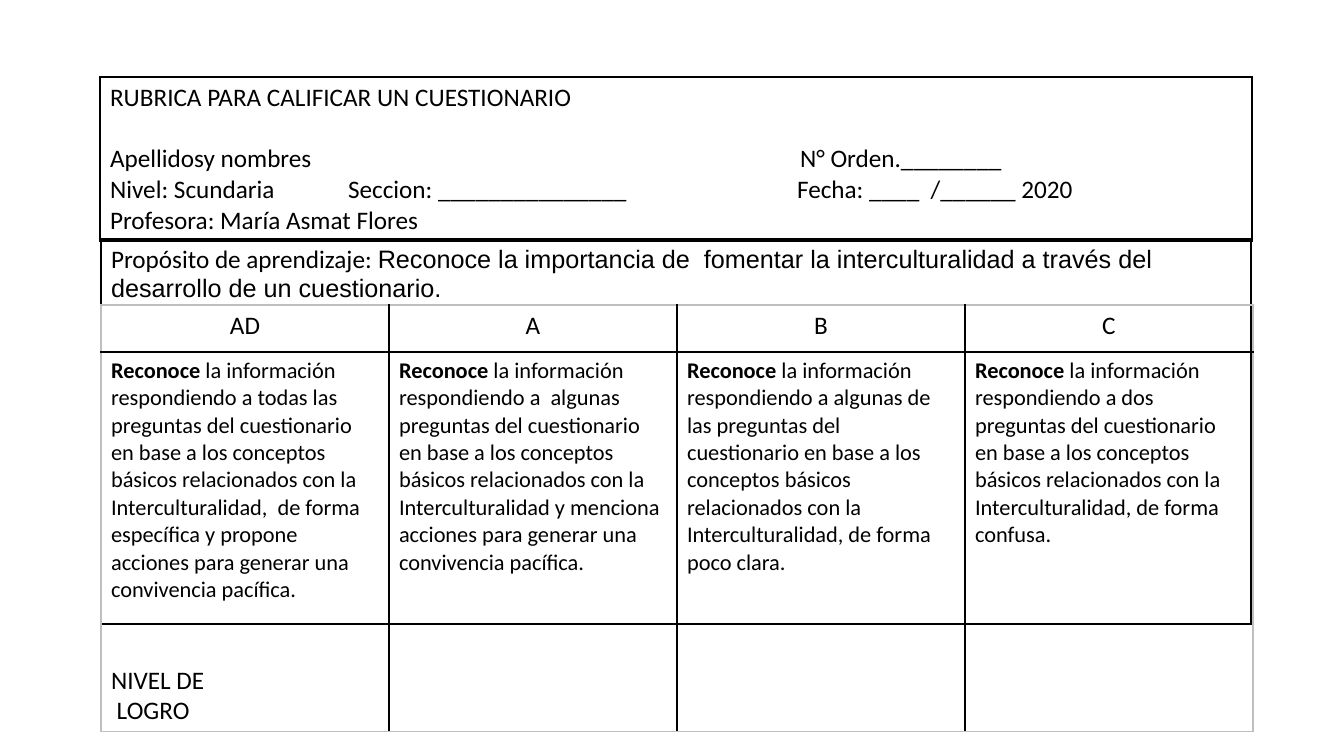
import pptx
import pptx.dml.color
import pptx.enum.text
import pptx.oxml.ns
import pptx.util
from lxml import etree

EMU_PER_PX = 914400 / 100.8
COLORS = {"text": "000000", "line": "000000", "outline": "BFBFBF"}
LINE_GAP = 22  # points, one line of 18 pt text
CENTER = pptx.enum.text.PP_ALIGN.CENTER

# A cell is a list of (runs, format) paragraphs; a run is (text, format).
HEADING = [
    ([("RUBRICA PARA CALIFICAR UN CUESTIONARIO", {})], {}),
    ([("Apellidosy nombres\tN° Orden.________", {})], {"before": LINE_GAP, "tabs": [690]}),
    ([("Nivel: Scundaria\tSeccion: _______________\tFecha: ____  /______ 2020", {})],
     {"tabs": [238, 687]}),
    ([("Profesora: María Asmat Flores", {})], {}),
]
PURPOSE = [
    ([("Propósito de aprendizaje: ", {}),
      ("Reconoce la importancia de  fomentar la interculturalidad a través del "
       "desarrollo de un cuestionario.", {"font": "Arial"})], {}),
]
LEVELS = {
    "AD": " la información respondiendo a todas las preguntas del cuestionario en base a los "
          "conceptos básicos relacionados con la Interculturalidad,  de forma específica y "
          "propone acciones para generar una convivencia pacífica.",
    "A": " la información respondiendo a  algunas preguntas del cuestionario en base a los "
         "conceptos básicos relacionados con la Interculturalidad y menciona acciones para "
         "generar una convivencia pacífica.",
    "B": " la información respondiendo a algunas de las preguntas del cuestionario en base a "
         "los conceptos básicos relacionados con la Interculturalidad, de forma poco clara.",
    "C": " la información respondiendo a dos preguntas del cuestionario en base a los "
         "conceptos básicos relacionados con la Interculturalidad, de forma  confusa.",
}
ACHIEVEMENT = [
    ([("NIVEL DE", {})], {"before": 2 * LINE_GAP}),
    ([(" LOGRO", {})], {}),
]


def px(length):
    return pptx.util.Emu(round(length * EMU_PER_PX))


def add_run(paragraph, text, font="Calibri", size=18, bold=False):
    run = paragraph.add_run()
    run.text = text
    run.font.name = font
    run.font.size = pptx.util.Pt(size)
    run.font.bold = bold
    run.font.color.rgb = pptx.dml.color.RGBColor.from_string(COLORS["text"])


def write_cell(cell, paragraphs):
    for index, (runs, style) in enumerate(paragraphs):
        frame = cell.text_frame
        paragraph = frame.add_paragraph() if index else frame.paragraphs[0]
        paragraph.alignment = style.get("align")
        paragraph.space_before = pptx.util.Pt(style.get("before", 0))
        if "tabs" in style:
            properties = paragraph._p.get_or_add_pPr()
            stops = etree.SubElement(properties, pptx.oxml.ns.qn("a:tabLst"))
            for position in style["tabs"]:
                etree.SubElement(stops, pptx.oxml.ns.qn("a:tab"),
                                 pos=str(px(position)), algn="l")
        for text, style_of_run in runs:
            add_run(paragraph, text, **style_of_run)


def add_border(cell, side, color):
    properties = cell._tc.get_or_add_tcPr()
    line = etree.SubElement(properties, pptx.oxml.ns.qn(f"a:ln{side}"),
                            w=str(pptx.util.Pt(1)))
    fill = etree.SubElement(line, pptx.oxml.ns.qn("a:solidFill"))
    etree.SubElement(fill, pptx.oxml.ns.qn("a:srgbClr"), val=color)


def add_grid(slide, left, top, width, heights, rows, outline="line"):
    """Add a table of equal columns, with its outer edge in the outline colour."""
    columns = len(rows[0])
    table = slide.shapes.add_table(len(rows), columns, px(left), px(top),
                                   px(width), px(sum(heights))).table
    table.first_row = table.horz_banding = False
    for row_index, (height, row) in enumerate(zip(heights, rows)):
        table.rows[row_index].height = px(height)
        for column_index, paragraphs in enumerate(row):
            cell = table.cell(row_index, column_index)
            on_edge = {
                "L": column_index == 0,
                "R": column_index == columns - 1,
                "T": row_index == 0,
                "B": row_index == len(rows) - 1,
            }
            for side, outer in on_edge.items():
                add_border(cell, side, COLORS[outline if outer else "line"])
            cell.fill.background()
            write_cell(cell, paragraphs)


def main():
    presentation = pptx.Presentation()
    presentation.slide_width, presentation.slide_height = px(1344), px(756)
    slide = presentation.slides.add_slide(presentation.slide_layouts[6])

    level_names = [[([(name, {})], {"align": CENTER})] for name in LEVELS]
    descriptions = [
        [([("Reconoce", {"size": 16, "bold": True}), (text, {"size": 16})], {})]
        for text in LEVELS.values()
    ]
    descriptions[0] += ACHIEVEMENT

    add_grid(slide, 100, 77, 1152, [155], [[HEADING]])
    add_grid(slide, 101, 239, 1150, [385], [[PURPOSE]])
    add_grid(slide, 101, 305, 1152, [47, 379], [level_names, descriptions], outline="outline")
    presentation.save("out.pptx")


if __name__ == "__main__":
    main()
